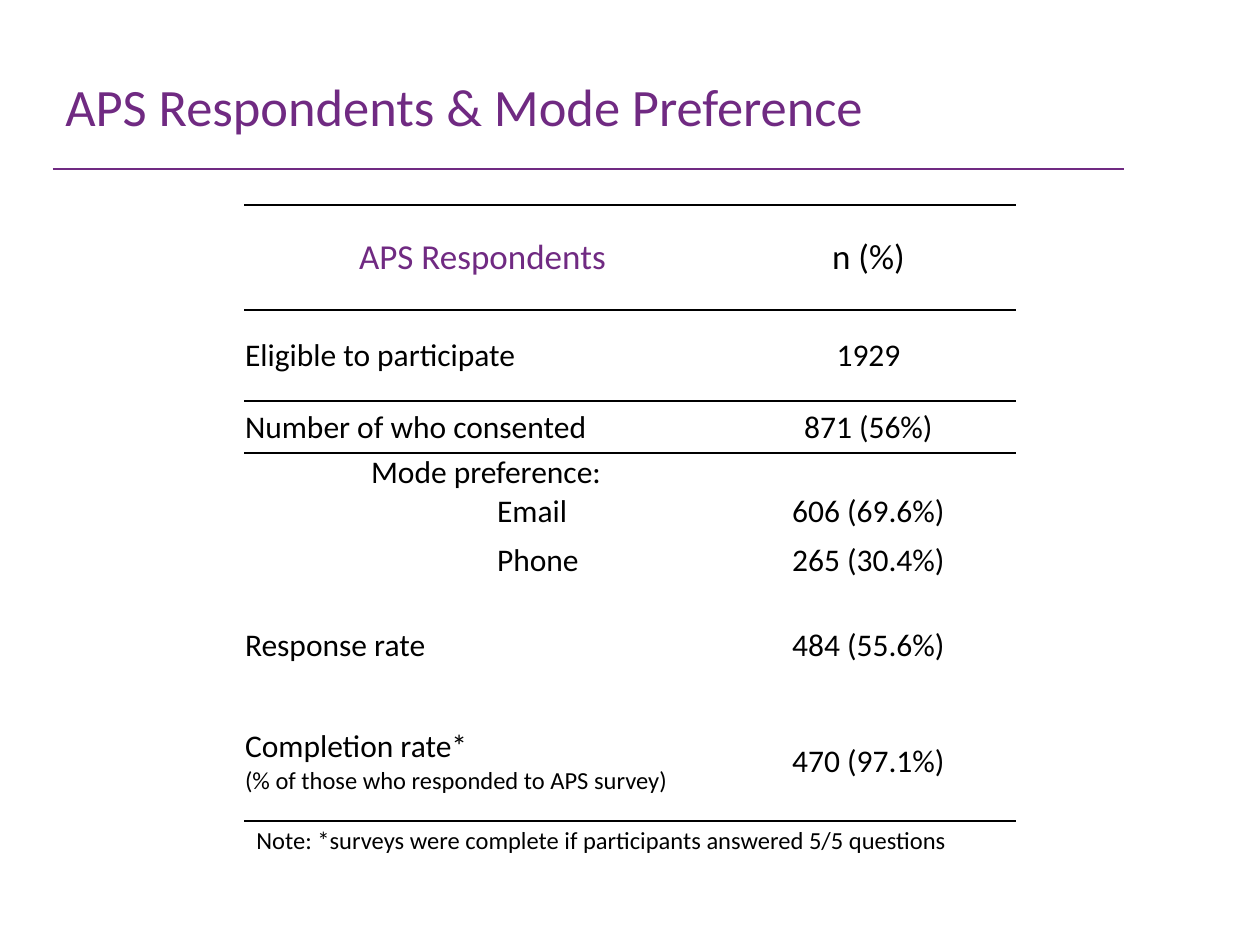
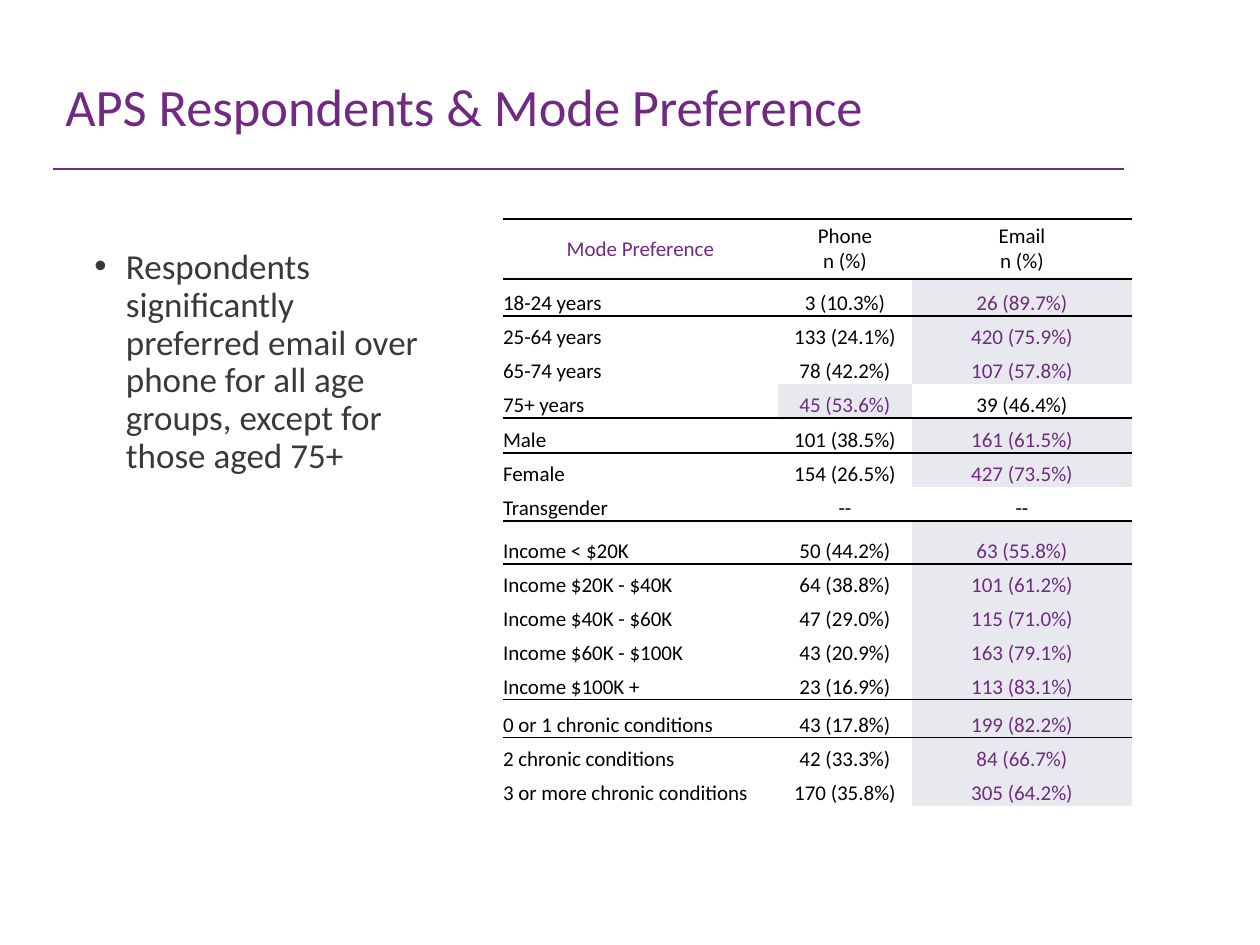
import pptx
import pptx.util
import pptx.dml.color
import pptx.enum.shapes
import pptx.enum.text
import pptx.oxml.ns
import lxml.etree

TITLE = "APS Respondents & Mode Preference"
RATES = [
    ("APS Respondents", "n (%)"),
    ("Eligible to participate", "1929"),
    ("Number of who consented", "871 (56%)"),
    ("Mode preference:", ""),
    ("Email", "606 (69.6%)"),
    ("Phone", "265 (30.4%)"),
    ("Response rate", "484 (55.6%)"),
    ("Completion rate*\n(% of those who responded to APS survey)", "470 (97.1%)"),
]
INDENT = {"Mode preference:": 1, "Email": 2, "Phone": 2}
NOTE = "Note: *surveys were complete if participants answered 5/5 questions"
POINT = ("Respondents significantly preferred email over phone "
         "for all age groups, except for those aged 75+")
HEADS = ("Mode Preference", "Phone\nn (%)", "Email\nn (%)")
GROUPS = [
    (139, [("18-24 years", "3 (10.3%)", "26 (89.7%)"),
           ("25-64 years", "133 (24.1%)", "420 (75.9%)"),
           ("65-74 years", "78 (42.2%)", "107 (57.8%)"),
           ("75+ years", "45 (53.6%)", "39 (46.4%)")]),
    (103, [("Male", "101 (38.5%)", "161 (61.5%)"),
           ("Female", "154 (26.5%)", "427 (73.5%)"),
           ("Transgender", "--", "--")]),
    (179, [("Income < $20K", "50 (44.2%)", "63 (55.8%)"),
           ("Income $20K - $40K", "64 (38.8%)", "101 (61.2%)"),
           ("Income $40K - $60K", "47 (29.0%)", "115 (71.0%)"),
           ("Income $60K - $100K", "43 (20.9%)", "163 (79.1%)"),
           ("Income $100K +", "23 (16.9%)", "113 (83.1%)")]),
    (106, [("0 or 1 chronic conditions", "43 (17.8%)", "199 (82.2%)"),
           ("2 chronic conditions", "42 (33.3%)", "84 (66.7%)"),
           ("3 or more chronic conditions", "170 (35.8%)", "305 (64.2%)")]),
]

THEME = {
    "font": "Calibri", "plum": "702A82", "ink": "000000", "soft": "3B3838",
    "tint": "E8E8EF", "title": 30, "large": 20, "mid": 18, "small": 14, "tiny": 12,
}
PLAIN = "{2D5ABB26-0587-4C30-8999-92F81FD0307C}"
ALIGN = pptx.enum.text.PP_ALIGN
ANCHOR = pptx.enum.text.MSO_ANCHOR


def px(size):
    return pptx.util.Emu(round(size * 914400 / 126))


def tone(name):
    return pptx.dml.color.RGBColor.from_string(THEME[name])


def put(item, **vals):
    for key, val in vals.items():
        setattr(item, key, val)


def node(base, tag, **vals):
    item = lxml.etree.SubElement(base, pptx.oxml.ns.qn(tag))
    for key, val in vals.items():
        item.set(key, str(val))
    return item


def write(frame, text, size, color="ink", **vals):
    for i, line in enumerate(text.split("\n")):
        para = frame.add_paragraph() if i else frame.paragraphs[0]
        put(para, **vals)
        if not line:
            node(para._p, "a:endParaRPr", sz=THEME[size] * 100)
            continue
        run = para.add_run()
        run.text = line
        put(run.font, name=THEME["font"], size=pptx.util.Pt(THEME[size]))
        run.font.color.rgb = tone(color)


def box(slide, area, text, size, color, wrap=True, anchor=ANCHOR.TOP, **vals):
    frame = slide.shapes.add_textbox(*map(px, area)).text_frame
    put(frame, word_wrap=wrap, vertical_anchor=anchor)
    write(frame, text, size, color, **vals)
    return frame


def start(deck):
    slide = deck.slides.add_slide(deck.slide_layouts[6])
    rule = slide.shapes.add_connector(
        pptx.enum.shapes.MSO_CONNECTOR.STRAIGHT, px(53), px(169), px(1124), px(169))
    rule.line.color.rgb = tone("plum")
    rule.line.width = pptx.util.Pt(1)
    node(rule._element.spPr, "a:effectLst")
    box(slide, (53, 53, 1159, 113), TITLE, "title", "plum",
        anchor=ANCHOR.MIDDLE, line_spacing=0.9)
    return slide


def grid(slide, left, top, wides, highs):
    area = map(px, (left, top, sum(wides), sum(highs)))
    table = slide.shapes.add_table(len(highs), len(wides), *area).table
    put(table, first_row=False, horz_banding=False)
    table._tbl.tblPr.find(pptx.oxml.ns.qn("a:tableStyleId")).text = PLAIN
    for col, wide in zip(table.columns, wides):
        col.width = px(wide)
    for row, high in zip(table.rows, highs):
        row.height = px(high)
    return table


def dress(cell, pad, anchor, sides, fill=None):
    put(cell, margin_left=px(pad), margin_right=px(pad), margin_top=px(pad),
        margin_bottom=0, vertical_anchor=anchor)
    props = cell._tc.get_or_add_tcPr()
    for side in sides:
        edge = node(props, "a:ln" + side, w=12700)
        node(node(edge, "a:solidFill"), "a:srgbClr", val=THEME["ink"])
    if fill:
        cell.fill.solid()
        cell.fill.fore_color.rgb = tone(fill)
    else:
        cell.fill.background()


def share(text):
    return float(text.split("(")[1].rstrip("%)")) if "(" in text else 0


def rates(deck):
    slide = start(deck)
    highs = (105, 91, 52, 39, 39, 59, 111, 120)
    table = grid(slide, 244, 205, (477, 295), highs)
    edges = {0: "TB", 1: "TB", 2: "T", len(RATES) - 1: "B"}
    for r, row in enumerate(RATES):
        for c, text in enumerate(row):
            cell = table.cell(r, c)
            dress(cell, 1, ANCHOR.MIDDLE, edges.get(r, ""))
            align = ALIGN.CENTER if c or not r else ALIGN.LEFT
            write(cell.text_frame, text, "mid" if r else "large",
                  "ink" if r or c else "plum", alignment=align)
            if text in INDENT:
                props = cell.text_frame.paragraphs[0]._p.get_or_add_pPr()
                props.set("marL", str(INDENT[text] * 914400))
    detail = table.cell(len(RATES) - 1, 0).text_frame.paragraphs[1]
    detail.runs[0].font.size = pptx.util.Pt(THEME["small"])
    box(slide, (244, 819, 722, 43), NOTE, "small", "ink", wrap=False)


def modes(deck):
    slide = start(deck)
    step = 34
    rows, highs, edges = [HEADS], [60], ["TB"]
    for span, group in GROUPS:
        rest = len(group) - 1
        rows += group
        highs += [span - rest * step] + [step] * rest
        edges += ["T"] + [""] * (rest - 1) + ["B"]
    edges[-1] = ""
    table = grid(slide, 503, 219, (275, 134, 220), highs)
    for r, row in enumerate(rows):
        best = max(map(share, row[1:])) if r else 0
        for c, text in enumerate(row):
            cell = table.cell(r, c)
            win = c > 0 and best > 0 and share(text) == best
            dress(cell, 0, ANCHOR.BOTTOM if r else ANCHOR.MIDDLE,
                  edges[r], "tint" if win else None)
            write(cell.text_frame, text, "tiny",
                  "plum" if win or r + c == 0 else "ink",
                  alignment=ALIGN.CENTER if c or not r else ALIGN.LEFT)
    frame = box(slide, (82, 243, 357, 389), POINT, "large", "soft",
                line_spacing=0.9, space_before=pptx.util.Pt(10))
    props = frame.paragraphs[0]._p.get_or_add_pPr()
    put_on = {"marL": "228600", "indent": "-228600"}
    for key, val in put_on.items():
        props.set(key, val)
    node(props, "a:buFont", typeface="Arial")
    node(props, "a:buChar", char="•")


def main():
    deck = pptx.Presentation()
    put(deck, slide_width=px(1260), slide_height=px(945))
    rates(deck)
    modes(deck)
    deck.save("out.pptx")


if __name__ == "__main__":
    main()
